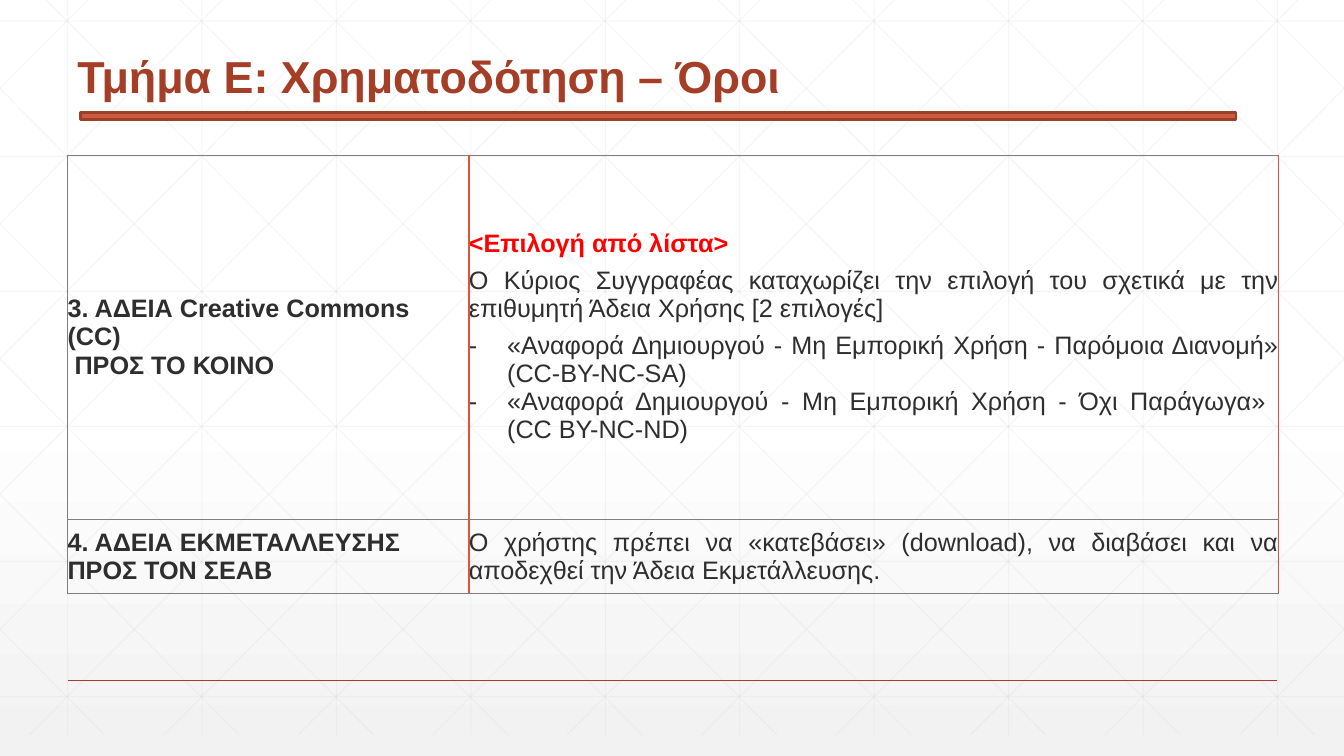
"""Build the slide on funding terms with its licence table."""
from dataclasses import dataclass

from lxml import etree
from pptx import Presentation
from pptx.dml.color import RGBColor
from pptx.enum.shapes import MSO_CONNECTOR, MSO_SHAPE
from pptx.enum.text import MSO_ANCHOR, PP_ALIGN
from pptx.oxml.ns import qn
from pptx.util import Inches, Pt

STRAIGHT = MSO_CONNECTOR.STRAIGHT
RECTANGLE = MSO_SHAPE.RECTANGLE
MIDDLE = MSO_ANCHOR.MIDDLE
LEFT, JUSTIFY = PP_ALIGN.LEFT, PP_ALIGN.JUSTIFY


@dataclass(frozen=True)
class Theme:
    font: str = "Arial"
    title_size: int = 32
    body_size: int = 18
    title: str = "A43E27"
    accent: str = "D15A3E"
    accent_edge: str = "98412D"
    text: str = "2D2E2D"
    choice: str = "FF0000"
    grid: str = "D8D8D8"
    border: str = "7F7F7F"
    background_top: str = "FFFFFF"
    background_bottom: str = "F2F2F2"


theme = Theme()
WIDTH, HEIGHT = 13.33, 7.5
GRID_TOP, GRID_BOTTOM, GRID_STEP = -0.21, 7.29, 4 / 3
SLOPE = 1.006


def add_line(start, end, color, width, alpha=100):
    """Draw a straight line without a shadow."""
    line = slide.shapes.add_connector(STRAIGHT, *map(Inches, (*start, *end)))
    line.line.color.rgb = RGBColor.from_string(color)
    line.line.width = Pt(width)
    properties = line._element.spPr
    etree.SubElement(properties, qn("a:effectLst"))
    if alpha < 100:
        color_element = properties.find(".//" + qn("a:srgbClr"))
        etree.SubElement(color_element, qn("a:alpha"), val=str(alpha * 1000))


def style_font(paragraph, size, color, bold):
    """Set the typeface, size, colour and weight of a paragraph."""
    paragraph.font.name = theme.font
    paragraph.font.size = Pt(size)
    paragraph.font.bold = bold
    paragraph.font.color.rgb = RGBColor.from_string(color)


presentation = Presentation()
presentation.slide_width, presentation.slide_height = Inches(WIDTH), Inches(HEIGHT)
slide = presentation.slides.add_slide(presentation.slide_layouts[6])

background = slide.background.fill
background.gradient()
background.gradient_angle = 270
first_stop, last_stop = background.gradient_stops
first_stop.position = 0.53
first_stop.color.rgb = RGBColor.from_string(theme.background_top)
last_stop.color.rgb = RGBColor.from_string(theme.background_bottom)

grid_lines = []
for column in range(10):
    x = 0.67 + column * GRID_STEP
    grid_lines.append(((x, 0), (x, GRID_BOTTOM)))
for row in range(6):
    y = 0.21 + row * 1.34
    grid_lines.append(((0, y), (WIDTH, y)))
for index in range(-5, 10):
    origin = 0.25 + index * GRID_STEP
    top = max(0, GRID_TOP - origin * SLOPE)
    bottom = min(GRID_BOTTOM, GRID_TOP + (WIDTH - origin) * SLOPE)
    start_x, end_x = (origin + (y - GRID_TOP) / SLOPE for y in (top, bottom))
    grid_lines.append(((start_x, top), (end_x, bottom)))
    grid_lines.append(((WIDTH - start_x, top), (WIDTH - end_x, bottom)))
for start, end in grid_lines:
    add_line(start, end, theme.grid, 0.75, alpha=24)

add_line((0.67, 6.75), (12.67, 6.75), theme.title, 1)

title_bar = slide.shapes.add_shape(
    RECTANGLE, Inches(0.8), Inches(1.12), Inches(11.46), Inches(0.07))
title_bar.shadow.inherit = False
title_bar.fill.solid()
title_bar.fill.fore_color.rgb = RGBColor.from_string(theme.accent)
title_bar.line.color.rgb = RGBColor.from_string(theme.accent_edge)
title_bar.line.width = Pt(2)

title_box = slide.shapes.add_textbox(Inches(0.67), Inches(0.23), Inches(12), Inches(1.11))
title_box.text_frame.word_wrap = True
title_box.text_frame.vertical_anchor = MIDDLE
title = title_box.text_frame.paragraphs[0]
title.text = "Τμήμα Ε: Χρηματοδότηση – Όροι"
title.line_spacing = 0.9
style_font(title, theme.title_size, theme.title, True)

COLUMN_WIDTHS = (3.98, 8.03)
ROW_HEIGHTS = (3.61, 0.74)
HEADING = dict(bold=True, align=LEFT)
CHOICE = dict(bold=True, color=theme.choice)
SPACED = dict(before=6)
BULLET = dict(bullet=True)
table_rows = [
    [
        [("3. ΑΔΕΙΑ Creative Commons (CC)\v ΠΡΟΣ ΤΟ ΚΟΙΝΟ", HEADING)],
        [
            ("<Επιλογή από λίστα>", CHOICE),
            ("Ο Κύριος Συγγραφέας καταχωρίζει την επιλογή του σχετικά με την "
             "επιθυμητή Άδεια Χρήσης [2 επιλογές]", SPACED),
            ("«Αναφορά Δημιουργού - Μη Εμπορική Χρήση - Παρόμοια Διανομή» "
             "(CC-BY-NC-SA)", BULLET | SPACED),
            ("«Αναφορά Δημιουργού - Μη Εμπορική Χρήση - Όχι Παράγωγα» \v"
             "(CC BY-NC-ND)", BULLET),
        ],
    ],
    [
        [("4. ΑΔΕΙΑ ΕΚΜΕΤΑΛΛΕΥΣΗΣ ΠΡΟΣ ΤΟΝ ΣΕΑΒ", HEADING)],
        [("Ο χρήστης πρέπει να «κατεβάσει» (download), να διαβάσει και να "
          "αποδεχθεί την Άδεια Εκμετάλλευσης.", {})],
    ],
]

table = slide.shapes.add_table(
    len(ROW_HEIGHTS), len(COLUMN_WIDTHS), Inches(0.67), Inches(1.54),
    Inches(sum(COLUMN_WIDTHS)), Inches(sum(ROW_HEIGHTS))).table
table.first_row = False
table.horz_banding = False
for column, width in zip(table.columns, COLUMN_WIDTHS):
    column.width = Inches(width)

for row_index, row_cells in enumerate(table_rows):
    table.rows[row_index].height = Inches(ROW_HEIGHTS[row_index])
    for column_index, contents in enumerate(row_cells):
        cell = table.cell(row_index, column_index)
        cell.vertical_anchor = MIDDLE
        cell.margin_left = cell.margin_right = cell.margin_top = cell.margin_bottom = 0
        borders = {
            "a:lnL": (theme.accent, 1.5) if column_index else (theme.border, 0.75),
            "a:lnR": (theme.accent, 1.5),
            "a:lnT": (theme.border, 0.75),
            "a:lnB": (theme.border, 0.75),
        }
        for tag, (color, width) in borders.items():
            border = etree.SubElement(
                cell._tc.get_or_add_tcPr(), qn(tag), w=str(Pt(width)))
            border_fill = etree.SubElement(border, qn("a:solidFill"))
            etree.SubElement(border_fill, qn("a:srgbClr"), val=color)
        cell.fill.background()

        for index, (text, look) in enumerate(contents):
            frame = cell.text_frame
            paragraph = frame.add_paragraph() if index else frame.paragraphs[0]
            paragraph.text = text
            if look.get("bullet"):
                properties = paragraph._p.get_or_add_pPr()
                properties.set("marL", str(Inches(0.38)))
                properties.set("indent", str(Inches(-0.38)))
                bullet_color = etree.SubElement(properties, qn("a:buClr"))
                etree.SubElement(bullet_color, qn("a:srgbClr"), val=theme.text)
                etree.SubElement(properties, qn("a:buFont"), typeface=theme.font)
                etree.SubElement(properties, qn("a:buChar"), char="-")
            paragraph.alignment = look.get("align", JUSTIFY)
            if "before" in look:
                paragraph.space_before = Pt(look["before"])
            style_font(paragraph, theme.body_size, look.get("color", theme.text),
                       look.get("bold", False))

presentation.save("out.pptx")
